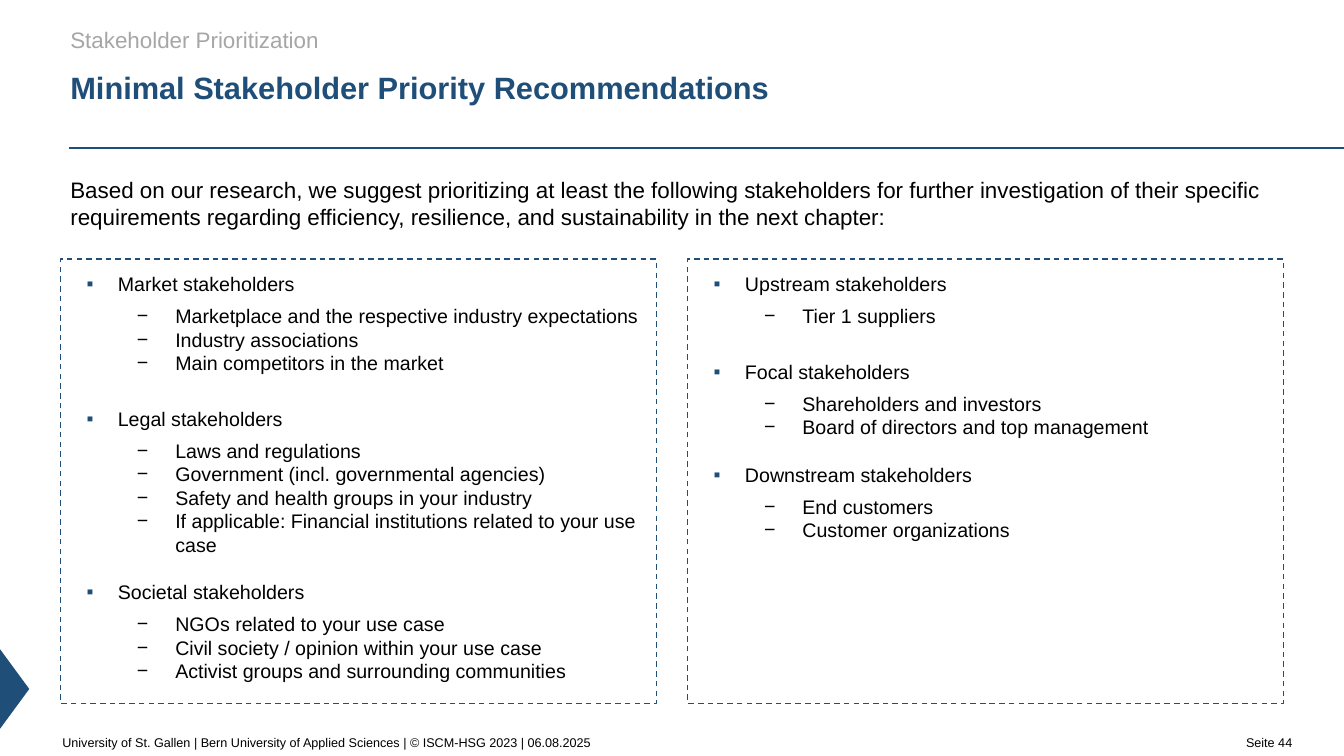
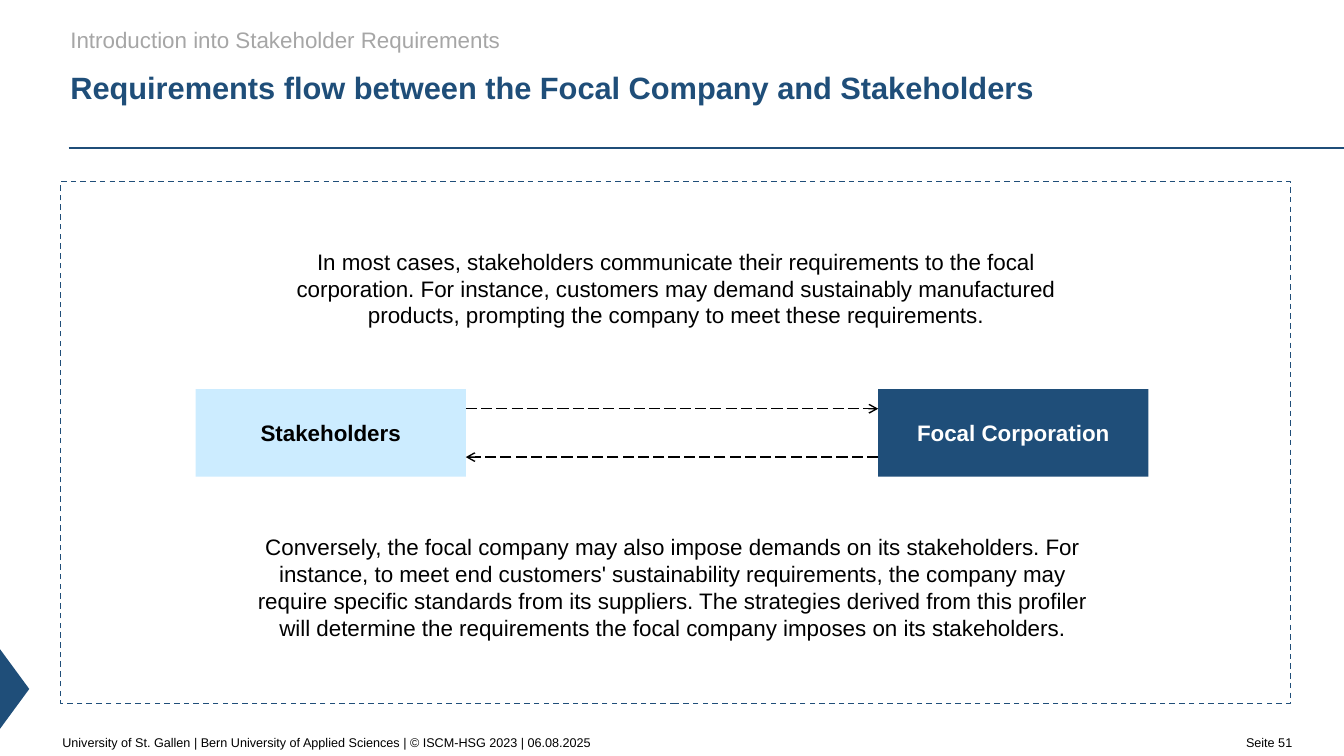
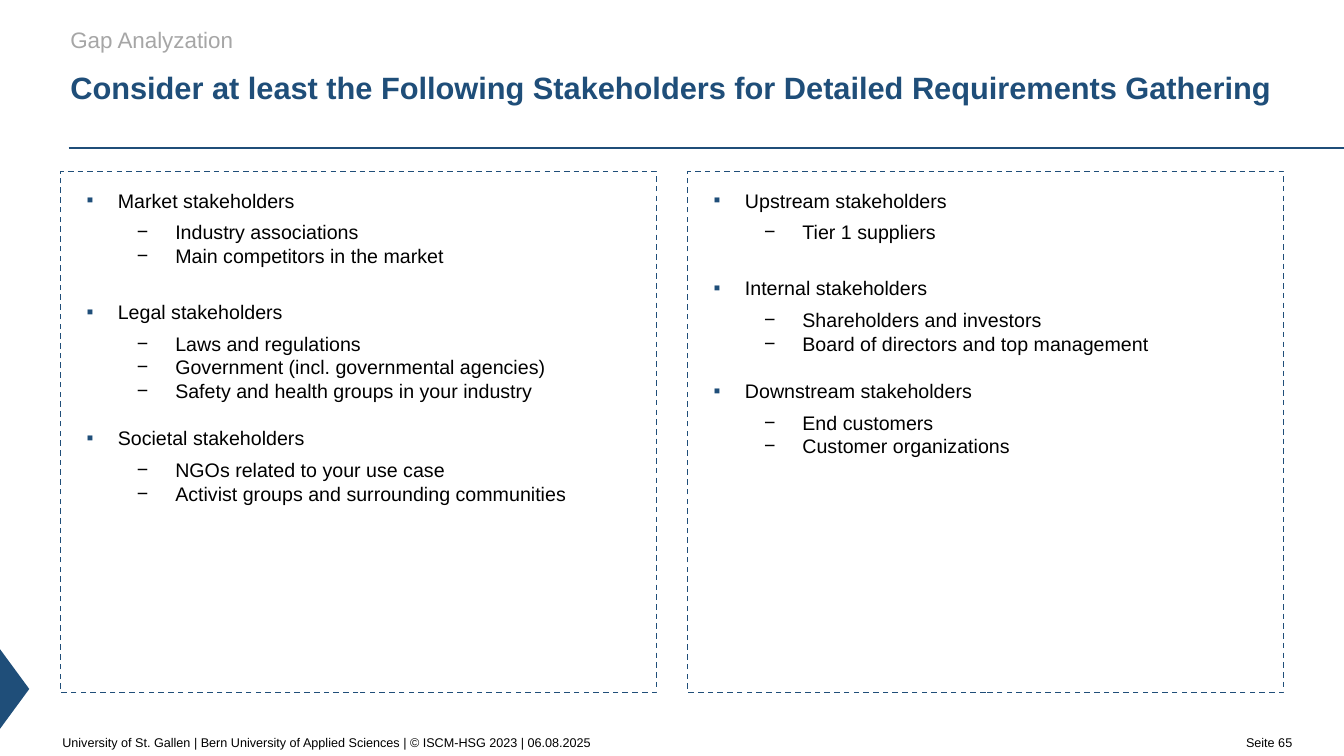
from lxml.etree import SubElement
from pptx import Presentation
from pptx.dml.color import RGBColor
from pptx.enum.dml import MSO_LINE_DASH_STYLE as DASH
from pptx.enum.shapes import MSO_CONNECTOR, MSO_SHAPE
from pptx.enum.text import MSO_ANCHOR as ANCHOR, PP_ALIGN as ALIGN
from pptx.oxml.ns import qn
from pptx.util import Inches, Pt

COLORS = {"navy": "1F4E79", "sky": "CCECFF", "gray": "A6A6A6", "black": "000000", "white": "FFFFFF"}
FONT = "Arial"
WIDTH, HEIGHT = 13.33, 7.5
MARGIN, CONTENT = 0.6, 12.2
COLUMN, GUTTER = 5.91, 0.31
LIST_INDENT, LIST_WIDTH = 0.16, 5.72
FRAME_BOTTOM = 6.98
BLOCK_WIDTH, BLOCK_HEIGHT = 2.68, 0.87
GROUP_GAPS = (0, 23, 17)
FOOTER = "University of St. Gallen | Bern University of Applied Sciences | © ISCM-HSG 2023 | 06.08.2025"

LEGAL = ("Legal stakeholders", ["Laws and regulations", "Government (incl. governmental agencies)",
                                "Safety and health groups in your industry"])
UPSTREAM = ("Upstream stakeholders", ["Tier 1 suppliers"])
OWNERS = ["Shareholders and investors", "Board of directors and top management"]
DOWNSTREAM = ("Downstream stakeholders", ["End customers", "Customer organizations"])
RIVALS = ["Industry associations", "Main competitors in the market"]
NGOS = "NGOs related to your use case"
ACTIVISTS = "Activist groups and surrounding communities"

PRIORITY_COLUMNS = [
    [("Market stakeholders", ["Marketplace and the respective industry expectations", *RIVALS]),
     (LEGAL[0], [*LEGAL[1], "If applicable: Financial institutions related to your use case"]),
     ("Societal stakeholders", [NGOS, "Civil society / opinion within your use case", ACTIVISTS])],
    [UPSTREAM, ("Focal stakeholders", OWNERS), DOWNSTREAM],
]
GATHERING_COLUMNS = [
    [("Market stakeholders", RIVALS), LEGAL, ("Societal stakeholders", [NGOS, ACTIVISTS])],
    [UPSTREAM, ("Internal stakeholders", OWNERS), DOWNSTREAM],
]
INTRO = ("Based on our research, we suggest prioritizing at least the following stakeholders for further "
         "investigation of their specific requirements regarding efficiency, resilience, and sustainability "
         "in the next chapter:")
TO_COMPANY = ("In most cases, stakeholders communicate their requirements to the focal corporation. For instance, "
              "customers may demand sustainably manufactured products, prompting the company to meet these "
              "requirements.")
TO_STAKEHOLDERS = ("Conversely, the focal company may also impose demands on its stakeholders. For instance, to meet "
                   "end customers' sustainability requirements, the company may require specific standards from its "
                   "suppliers. The strategies derived from this profiler will determine the requirements the focal "
                   "company imposes on its stakeholders.")


def rgb(name):
    """Return the named color."""
    return RGBColor.from_string(COLORS[name])


def inches(*lengths):
    """Convert plain numbers to lengths."""
    return [Inches(length) for length in lengths]


def write(para, text, size, color="black", bold=False):
    """Fill a paragraph and format its runs."""
    para.text = text
    for span in para.runs:
        span.font.name = FONT
        span.font.size = Pt(size)
        span.font.bold = bold
        span.font.color.rgb = rgb(color)


def add_text(page, area, text, size=16, color="black", bold=False, align=ALIGN.LEFT, anchor=ANCHOR.TOP):
    """Add a wrapped text box with one paragraph."""
    frame = page.shapes.add_textbox(*inches(*area)).text_frame
    frame.word_wrap = True
    frame.vertical_anchor = anchor
    write(frame.paragraphs[0], text, size, color, bold)
    frame.paragraphs[0].alignment = align


def add_block(page, kind, area, fill):
    """Add a filled shape without outline."""
    block = page.shapes.add_shape(kind, *inches(*area))
    block.shadow.inherit = False
    block.fill.solid()
    block.fill.fore_color.rgb = rgb(fill)
    block.line.fill.background()
    return block


def add_label_block(page, area, text, fill, color):
    """Add a rectangle with a centered bold label."""
    frame = add_block(page, MSO_SHAPE.RECTANGLE, area, fill).text_frame
    frame.vertical_anchor = ANCHOR.MIDDLE
    write(frame.paragraphs[0], text, 16, color, True)
    frame.paragraphs[0].alignment = ALIGN.CENTER


def add_frame(page, area):
    """Add a dashed, unfilled frame."""
    frame = page.shapes.add_shape(MSO_SHAPE.RECTANGLE, *inches(*area))
    frame.shadow.inherit = False
    frame.fill.background()
    frame.line.color.rgb = rgb("navy")
    frame.line.width = Pt(1)
    frame.line.dash_style = DASH.DASH


def add_line(page, start, end, color, width):
    """Add a straight line without shadow."""
    line = page.shapes.add_connector(MSO_CONNECTOR.STRAIGHT, *inches(*start, *end))
    line.line.color.rgb = rgb(color)
    line.line.width = Pt(width)
    SubElement(line._element.spPr, qn("a:effectLst"))
    return line


def add_arrow(page, start, end):
    """Add a dashed arrow."""
    arrow = add_line(page, start, end, "black", 1)
    arrow.line.dash_style = DASH.LONG_DASH
    SubElement(arrow.line._get_or_add_ln(), qn("a:tailEnd"), type="arrow")


def set_bullet(para, char, color, left, hanging):
    """Give a paragraph a hanging bullet."""
    props = para._p.get_or_add_pPr()
    props.set("marL", str(Inches(left)))
    props.set("indent", str(-Inches(hanging)))
    SubElement(SubElement(props, qn("a:buClr")), qn("a:srgbClr"), val=COLORS[color])
    SubElement(props, qn("a:buFont"), typeface=FONT)
    SubElement(props, qn("a:buChar"), char=char)


def add_groups(page, area, groups):
    """Add a two-level list of stakeholder groups."""
    frame = page.shapes.add_textbox(*inches(*area)).text_frame
    frame.word_wrap = True
    for index, (heading, members) in enumerate(groups):
        para = frame.add_paragraph() if index else frame.paragraphs[0]
        set_bullet(para, "▪", "navy", 0.31, 0.31)
        write(para, heading, 14)
        para.space_before = Pt(GROUP_GAPS[index])
        para.space_after = Pt(6)
        for member in members:
            para = frame.add_paragraph()
            para.level = 1
            set_bullet(para, "−", "black", 0.88, 0.38)
            write(para, member, 14)


def add_columns(page, columns, top, bottom, padding):
    """Add framed columns of stakeholder groups."""
    for index, groups in enumerate(columns):
        left = MARGIN + index * (COLUMN + GUTTER)
        add_frame(page, (left, top, COLUMN, bottom - top))
        add_groups(page, (left + LIST_INDENT, top + padding, LIST_WIDTH, 4.15), groups)


def add_page(deck, chapter, title, number):
    """Add a slide with header, rule, marker and footer."""
    page = deck.slides.add_slide(deck.slide_layouts[6])
    footer_top, footer_height = 7.23, 0.27
    add_text(page, (0.52, footer_top, 10.87, footer_height), FOOTER, 9, anchor=ANCHOR.MIDDLE)
    add_text(page, (12.26, footer_top, 0.79, footer_height), f"Seite {number}", 9, anchor=ANCHOR.MIDDLE)
    add_line(page, (0.68, 1.47), (WIDTH, 1.47), "navy", 1.5)
    add_block(page, MSO_SHAPE.ISOSCELES_TRIANGLE, (-0.25, 6.69, 0.79, 0.29), "navy").rotation = 90
    add_text(page, (MARGIN, 0.21, CONTENT, 0.39), chapter, color="gray")
    add_text(page, (MARGIN, 0.63, CONTENT, 0.84), title, 22, "navy", True)
    return page


def add_flow(page):
    """Add the exchange between stakeholders and corporation."""
    top, left, right, offset = 3.86, 1.94, 8.71, 0.24
    middle, left_edge = top + BLOCK_HEIGHT / 2, left + BLOCK_WIDTH
    add_frame(page, (MARGIN, 1.8, CONTENT, FRAME_BOTTOM - 1.8))
    add_text(page, (2.77, 2.41, 7.87, 0.91), TO_COMPANY, align=ALIGN.CENTER)
    add_label_block(page, (left, top, BLOCK_WIDTH, BLOCK_HEIGHT), "Stakeholders", "sky", "black")
    add_label_block(page, (right, top, BLOCK_WIDTH, BLOCK_HEIGHT), "Focal Corporation", "navy", "white")
    add_arrow(page, (left_edge, middle - offset), (right, middle - offset))
    add_arrow(page, (right, middle + offset), (left_edge, middle + offset))
    add_text(page, (2.3, 5.24, 8.74, 1.25), TO_STAKEHOLDERS, align=ALIGN.CENTER)


def main():
    """Build and save the deck."""
    deck = Presentation()
    deck.slide_width, deck.slide_height = inches(WIDTH, HEIGHT)

    page = add_page(deck, "Stakeholder Prioritization", "Minimal Stakeholder Priority Recommendations", 44)
    add_text(page, (MARGIN, 1.7, CONTENT, 0.71), INTRO)
    add_columns(page, PRIORITY_COLUMNS, 2.57, FRAME_BOTTOM, 0.08)

    page = add_page(deck, "Introduction into Stakeholder Requirements",
                    "Requirements flow between the Focal Company and Stakeholders", 51)
    add_flow(page)

    page = add_page(deck, "Gap Analyzation",
                    "Consider at least the Following Stakeholders for Detailed Requirements Gathering", 65)
    add_columns(page, GATHERING_COLUMNS, 1.7, 6.87, 0.12)

    deck.save("out.pptx")


if __name__ == "__main__":
    main()
